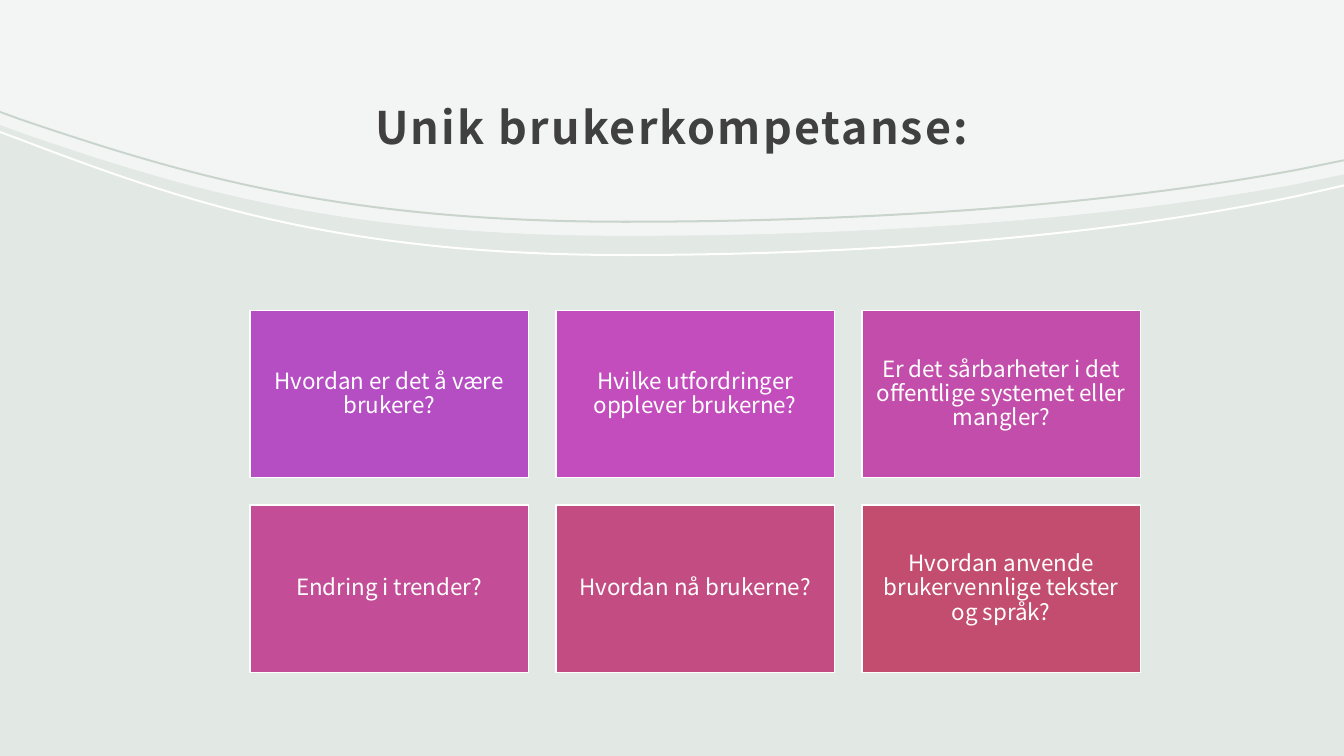
from dataclasses import dataclass
from typing import Any

from lxml.etree import SubElement
from pptx import Presentation
from pptx.dml.color import RGBColor
from pptx.enum.shapes import MSO_SHAPE
from pptx.enum.text import MSO_ANCHOR, PP_ALIGN
from pptx.oxml.ns import qn
from pptx.util import Inches, Pt

WIDTH, HEIGHT = 13.33, 7.5
FONT = "Noto Sans CJK JP"
Point = tuple[float, float]

# Card grid, spread evenly from the left edge to the right one
LEFT, RIGHT, TOP = 2.48, 11.31, 3.08
CARD_W, CARD_H = 2.76, 1.66
COLS = 3
STEP_X = (RIGHT - LEFT - CARD_W) / (COLS - 1)
STEP_Y = 1.93

# Knots of the waves: two line ends around two joined curves
WAVE_X = (0, 0.19, 1.79, 3.33, 6.2, 8.75, 11.09, 12.89, WIDTH)
BENDS = (1.79, 3.33, 8.75, 11.09)


@dataclass(frozen=True)
class Band:
    upper: list[Point]
    lower: list[Point]
    color: str
    alpha: int = 100


@dataclass(frozen=True)
class Card:
    text: str
    color: str


def paint(fill: Any, color: str) -> None:
    fill.solid()
    fill.fore_color.rgb = RGBColor.from_string(color)


def apply(target: Any, values: dict[str, Any]) -> None:
    for name, value in values.items():
        setattr(target, name, value)


def wave(levels: tuple[float, ...], drop: float = 0) -> list[Point]:
    return [(x, y + drop) for x, y in zip(WAVE_X, levels)]


def bend(shape: Any, ring: list[Point]) -> None:
    """Join each pair of bend points and the knot after it into a cubic curve."""
    lines = list(shape.element.iter(qn("a:lnTo")))
    for i in range(1, len(ring)):
        if ring[i][0] in BENDS and ring[i - 1][0] not in BENDS:
            trio = lines[i - 1:i + 2]
            arc = trio[0].makeelement(qn("a:cubicBezTo"))
            trio[0].addprevious(arc)
            for line in trio:
                arc.append(line[0])
                line.getparent().remove(line)


def draw_band(slide: Any, band: Band) -> None:
    ring = band.upper + band.lower[::-1]
    spots = [(Inches(x), Inches(y)) for x, y in ring]
    pen = slide.shapes.build_freeform(*spots[0])
    pen.add_line_segments(spots[1:], close=False)
    shape = pen.convert_to_shape()
    bend(shape, ring)
    SubElement(shape.element.find(".//" + qn("a:path")), qn("a:close"))
    shape.shadow.inherit = False
    shape.line.fill.background()
    paint(shape.fill, band.color)
    if band.alpha < 100:
        tint = shape.element.spPr.find(".//" + qn("a:srgbClr"))
        SubElement(tint, qn("a:alpha"), val=str(band.alpha * 1000))


def write(shape: Any, text: str, color: str, frame: dict[str, Any],
          para: dict[str, Any], font: dict[str, Any]) -> Any:
    """Fill a shape with one styled paragraph and return its run."""
    box = shape.text_frame
    apply(box, {"word_wrap": True, "vertical_anchor": MSO_ANCHOR.MIDDLE} | frame)
    line = box.paragraphs[0]
    apply(line, {"alignment": PP_ALIGN.CENTER} | para)
    run = line.add_run()
    run.text = text
    apply(run.font, {"name": FONT} | font)
    paint(run.font.fill, color)
    return run


def draw_title(slide: Any, text: str) -> None:
    title = slide.shapes.title
    apply(title, {"left": Inches(1.33), "top": Inches(0.6),
                  "width": Inches(10.67), "height": Inches(1.14)})
    sides = ("margin_left", "margin_top", "margin_right")
    frame = dict.fromkeys(sides, Inches(0.12)) | {"margin_bottom": Inches(0.1)}
    run = write(title, text, "404040", frame, {"line_spacing": 1.3},
                {"size": Pt(32), "bold": True})
    run.font._element.set("spc", "150")
    # Bring the title in front of the pale panel
    slide.shapes.element.append(title.element)


def draw_card(slide: Any, card: Card, index: int) -> None:
    row, col = divmod(index, COLS)
    shape = slide.shapes.add_shape(
        MSO_SHAPE.RECTANGLE,
        Inches(LEFT + col * STEP_X), Inches(TOP + row * STEP_Y),
        Inches(CARD_W), Inches(CARD_H))
    shape.shadow.inherit = False
    paint(shape.fill, card.color)
    paint(shape.line.fill, "FFFFFF")
    shape.line.width = Pt(1)
    sides = ("margin_left", "margin_top", "margin_right", "margin_bottom")
    write(shape, card.text, "FFFFFF", dict.fromkeys(sides, Inches(0.07)),
          {"line_spacing": 0.9}, {"size": Pt(16)})


PANEL = (1.24, 1.31, 1.86, 2.34, 2.34, 2.34, 2.16, 1.82, 1.73)
WHITE = (1.3, 1.37, 1.98, 2.52, 2.52, 2.52, 2.31, 1.93, 1.83)
GREY = (1.1, 1.17, 1.71, 2.19, 2.19, 2.19, 2.01, 1.67, 1.58)

BACK = [
    Band([(0, 0), (WIDTH, 0)], wave(PANEL), "FFFFFF", 60),
    Band(wave(WHITE), wave(WHITE, 0.02), "FFFFFF"),
]
FRONT = Band(wave(GREY), wave(GREY, 0.02), "C8D4CC")

CARDS = [
    Card("Hvordan er det å være brukere?", "B54DC3"),
    Card("Hvilke utfordringer opplever brukerne?", "C34DBD"),
    Card("Er det sårbarheter i det offentlige systemet eller mangler?", "C34DAA"),
    Card("Endring i trender?", "C34D96"),
    Card("Hvordan nå brukerne?", "C34D83"),
    Card("Hvordan anvende brukervennlige tekster og språk?", "C34D6F"),
]


def main() -> None:
    deck = Presentation()
    apply(deck, {"slide_width": Inches(WIDTH), "slide_height": Inches(HEIGHT)})
    slide = deck.slides.add_slide(deck.slide_layouts.get_by_name("Title Only"))
    paint(slide.background.fill, "E2E8E4")

    # Waves and title
    for band in BACK:
        draw_band(slide, band)
    draw_title(slide, "Unik brukerkompetanse:")
    draw_band(slide, FRONT)

    # Questions
    for index, card in enumerate(CARDS):
        draw_card(slide, card, index)

    deck.save("out.pptx")


if __name__ == "__main__":
    main()
